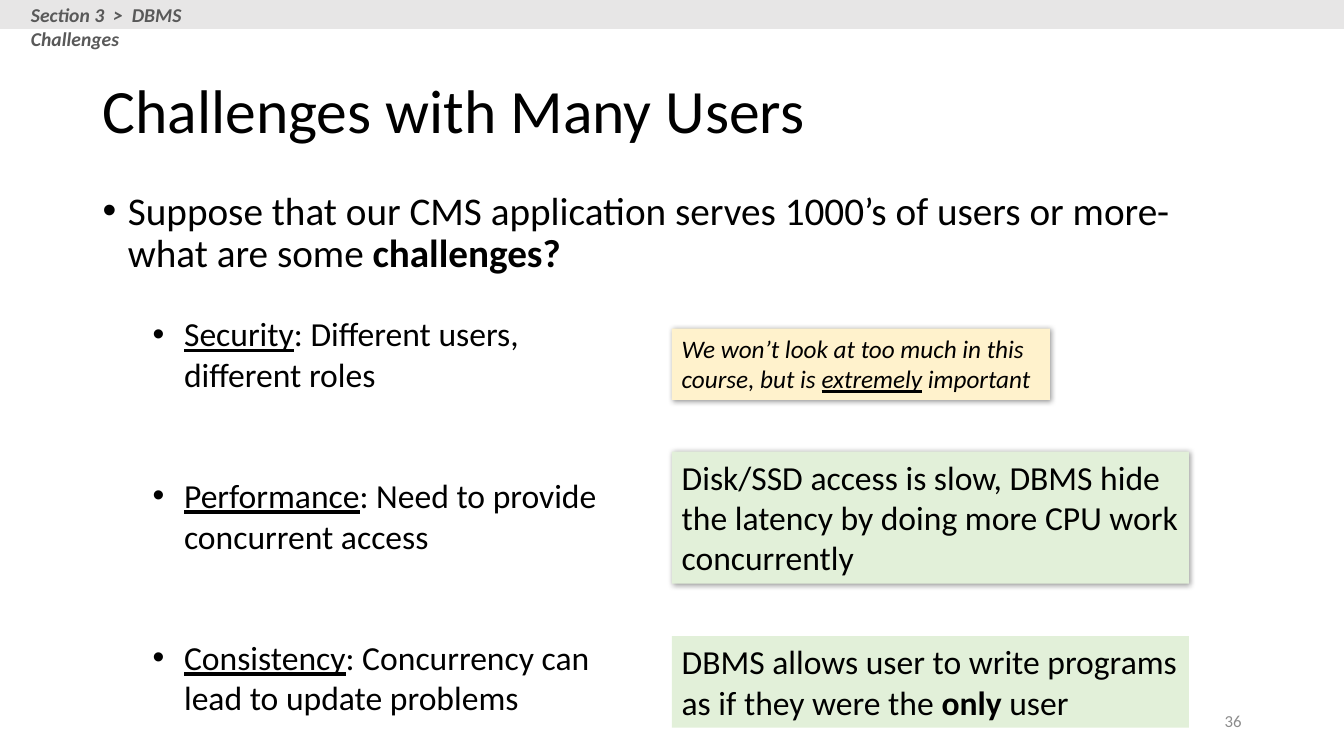
from pptx import Presentation
from pptx.dml.color import RGBColor
from pptx.enum.shapes import MSO_SHAPE
from pptx.enum.text import MSO_ANCHOR, MSO_AUTO_SIZE, PP_ALIGN
from pptx.oxml import parse_xml
from pptx.oxml.ns import nsdecls, qn
from pptx.util import Cm, Pt

RECTANGLE = MSO_SHAPE.RECTANGLE
LEFT, RIGHT = PP_ALIGN.LEFT, PP_ALIGN.RIGHT
TOP, MIDDLE = MSO_ANCHOR.TOP, MSO_ANCHOR.MIDDLE
NO_AUTOFIT = MSO_AUTO_SIZE.NONE

FONT = "Calibri"
BLACK, DARK_GRAY, MID_GRAY, LIGHT_GRAY = "000000", "595959", "8C8C8C", "E7E6E6"
GREEN, YELLOW = "E2F0D9", "FFF2CC"

CHALLENGES = [
    ("Security", ": Different users, different roles"),
    ("Performance", ": Need to provide concurrent access"),
    ("Consistency", ": Concurrency can lead to update problems"),
]

# Each note: top, width, height, fill, size, italic, shadow, paragraphs of (text, style)
NOTES = [
    (8.28, 9.53, 1.8, YELLOW, 18, True, True,
     [[("We won’t look at too much in this course, but is ", ""),
       ("extremely", "underline"), (" important", "")]]),
    (11.38, 13.03, 3.33, GREEN, 24, False, True,
     [[("Disk/SSD access is slow, DBMS hide the latency by doing more CPU work "
        "concurrently", "")]]),
    (16.03, 13.03, 2.31, GREEN, 24, False, False,
     [[("DBMS allows user to write programs", "")],
      [("as if they were the ", ""), ("only ", "bold"), ("user", "")]]),
]


def color(value):
    return RGBColor.from_string(value)


def place(shape, box):
    shape.left, shape.top, shape.width, shape.height = (Cm(length) for length in box)


def prepare_frame(shape, anchor=TOP):
    frame = shape.text_frame
    frame.word_wrap = True
    frame.auto_size = NO_AUTOFIT
    frame.vertical_anchor = anchor
    return frame


def add_run(paragraph, text, size, value=BLACK, bold=False, italic=False, underline=False):
    run = paragraph.add_run()
    run.text = text
    font = run.font
    font.name, font.size = FONT, Pt(size)
    font.bold, font.italic, font.underline = bold, italic, underline
    font.color.rgb = color(value)


def next_paragraph(frame, index):
    paragraph = frame.paragraphs[0] if index == 0 else frame.add_paragraph()
    paragraph.alignment = LEFT
    return paragraph


def set_bullet(paragraph, margin, hanging):
    properties = paragraph._p.get_or_add_pPr()
    properties.set("marL", str(Cm(margin)))
    properties.set("indent", str(-Cm(hanging)))
    properties.append(parse_xml(f'<a:buFont {nsdecls("a")} typeface="Arial"/>'))
    properties.append(parse_xml(f'<a:buChar {nsdecls("a")} char="•"/>'))


def add_rectangle(slide, box, fill):
    shape = slide.shapes.add_shape(RECTANGLE, *(Cm(length) for length in box))
    shape.shadow.inherit = False
    shape.fill.solid()
    shape.fill.fore_color.rgb = color(fill)
    shape.line.fill.background()
    return shape


def add_shadow(shape):
    shape._element.spPr.find(qn("a:effectLst")).append(parse_xml(
        f'<a:outerShdw {nsdecls("a")} blurRad="{Pt(4)}" dist="{Pt(1)}" dir="2700000" '
        'algn="tl" rotWithShape="0"><a:srgbClr val="000000">'
        '<a:alpha val="40000"/></a:srgbClr></a:outerShdw>'))


def add_label(slide, box, anchor=TOP):
    shape = slide.shapes.add_textbox(*(Cm(length) for length in box))
    return prepare_frame(shape, anchor)


def add_header(slide, box):
    left, top, _, _ = box
    add_rectangle(slide, box, LIGHT_GRAY)
    frame = add_label(slide, (left + 0.53, top - 0.05, 6.53, 0.86))
    add_run(frame.paragraphs[0], "Section 3  >  DBMS Challenges", 14, DARK_GRAY,
            bold=True, italic=True)


def fill_title(slide, box):
    title = slide.shapes.title
    place(title, box)
    paragraph = next_paragraph(prepare_frame(title, MIDDLE), 0)
    paragraph.line_spacing = 0.9
    add_run(paragraph, "Challenges with Many Users", 44)


def fill_question(slide, box):
    body = slide.placeholders[1]
    place(body, box)
    paragraph = next_paragraph(prepare_frame(body), 0)
    paragraph.line_spacing = 0.9
    paragraph.space_before = Pt(10)
    set_bullet(paragraph, 0.64, 0.64)
    add_run(paragraph, "Suppose that our CMS application serves 1000’s of users "
            "or more- what are some ", 28)
    add_run(paragraph, "challenges?", 28, bold=True)


def add_challenges(slide, box):
    frame = add_label(slide, box)
    for index, (name, explanation) in enumerate(CHALLENGES):
        paragraph = next_paragraph(frame, index)
        paragraph.space_before = Pt(58 if index else 0)
        set_bullet(paragraph, 2.06, 0.79)
        add_run(paragraph, name, 24, underline=True)
        add_run(paragraph, explanation, 24)


def add_notes(slide, left):
    for top, width, height, fill, size, italic, shadow, paragraphs in NOTES:
        shape = add_rectangle(slide, (left, top, width, height), fill)
        if shadow:
            add_shadow(shape)
        frame = prepare_frame(shape)
        for index, runs in enumerate(paragraphs):
            paragraph = next_paragraph(frame, index)
            for text, style in runs:
                add_run(paragraph, text, size, bold=style == "bold", italic=italic,
                        underline=style == "underline")


def add_slide_number(slide, box):
    paragraph = add_label(slide, box, MIDDLE).paragraphs[0]
    paragraph.alignment = RIGHT
    add_run(paragraph, "36", 12, MID_GRAY)


def main():
    presentation = Presentation()
    presentation.slide_width, presentation.slide_height = Cm(33.87), Cm(19.05)
    slide = presentation.slides.add_slide(presentation.slide_layouts[1])
    fill_title(slide, (2.33, 1.01, 29.21, 3.68))
    fill_question(slide, (2.33, 4.7, 29.21, 2.95))
    add_notes(slide, 16.93)
    add_slide_number(slide, (23.92, 17.66, 7.62, 1.01))
    add_header(slide, (0, 0, 33.87, 0.73))
    add_challenges(slide, (2.33, 7.77, 14.05, 10.52))
    presentation.save("out.pptx")


if __name__ == "__main__":
    main()
